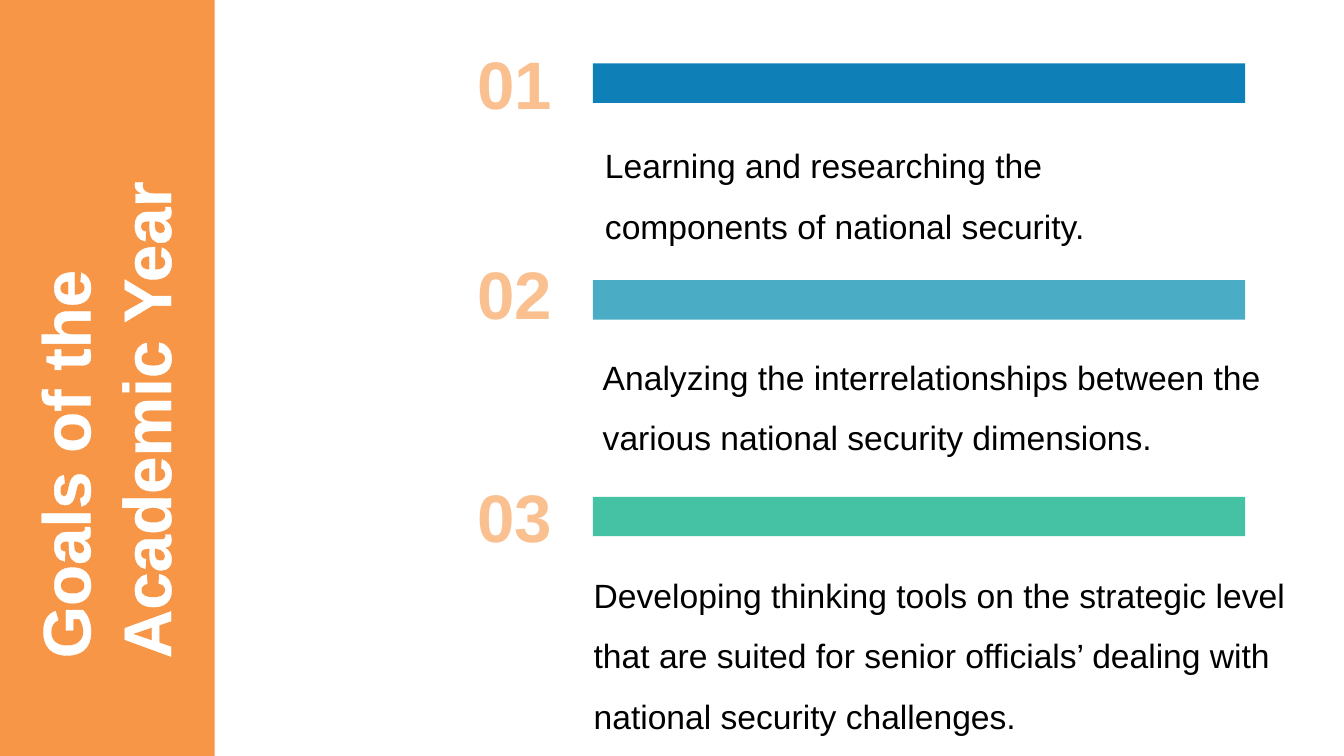
from dataclasses import dataclass

from lxml.etree import SubElement
from pptx import Presentation
from pptx.dml.color import RGBColor
from pptx.enum.shapes import MSO_SHAPE
from pptx.enum.text import MSO_ANCHOR, MSO_AUTO_SIZE, PP_ALIGN
from pptx.oxml.ns import qn
from pptx.util import Inches, Pt


@dataclass(frozen=True)
class Theme:
    font: str = "Arial"
    big: int = 48
    body: int = 24
    side: str = "F79646"
    number: str = "FAC090"
    white: str = "FFFFFF"
    black: str = "000000"
    bars: tuple = ("0E7FB7", "4BACC6", "45C1A4")


THEME = Theme()

# Number top, text box (left, top, width, height, side inset) from the bar's
# left and top edges, and wording of each goal
GOALS = [
    (-0.26, (0, 0.56, 5.78, 1.26, 0.12),
     "Learning and researching the components of national security."),
    (-0.33, (0, 0.51, 7.24, 1.26, 0.1),
     "Analyzing the interrelationships between the various national "
     "security dimensions."),
    (-0.26, (-0.09, 0.52, 7.24, 1.87, 0.1),
     "Developing thinking tools on the strategic level that are suited for "
     "senior officials’ dealing with national security challenges."),
]


def place(shape, left, top, width, height):
    shape.left, shape.top = Inches(left), Inches(top)
    shape.width, shape.height = Inches(width), Inches(height)


def write(shape, text, size, color, bold=False, align=PP_ALIGN.LEFT,
          space=1.0, inset=0.1):
    frame = shape.text_frame
    frame.text = text
    frame.word_wrap = True
    frame.auto_size = MSO_AUTO_SIZE.NONE
    frame.margin_left = frame.margin_right = Inches(inset)
    frame.margin_top = frame.margin_bottom = Inches(0.05)
    para = frame.paragraphs[0]
    para.alignment, para.line_spacing = align, space
    font = para.runs[0].font
    font.name, font.size, font.bold = THEME.font, Pt(size), bold
    font.color.rgb = RGBColor.from_string(color)


def add_box(slide, left, top, width, height, *args, **style):
    box = slide.shapes.add_textbox(0, 0, 0, 0)
    place(box, left, top, width, height)
    write(box, *args, **style)


def add_bar(slide, left, top, width, height, color):
    bar = slide.shapes.add_shape(MSO_SHAPE.RECTANGLE, 0, 0, 0, 0)
    place(bar, left, top, width, height)
    bar.shadow.inherit = False
    bar.fill.solid()
    bar.fill.fore_color.rgb = RGBColor.from_string(color)
    bar.line.fill.background()
    return bar


def add_side(slide, left, top, width, height):
    # Band goes behind the title
    title = slide.shapes.title
    band = add_bar(slide, left, top, width, height, THEME.side)
    title.element.addprevious(band.element)

    # Title reads upwards along the band
    place(title, left - 1.79, top + 2.95, 5.64, 1.72)
    title.rotation = 270
    write(title, "Goals of the Academic Year", THEME.big, THEME.white,
          bold=True)
    title.text_frame.vertical_anchor = MSO_ANCHOR.MIDDLE

    # Thin white outline on the letters
    props = title.element.find(".//" + qn("a:rPr"))
    line = SubElement(props, qn("a:ln"), w=str(int(Pt(0.75))))
    fill = SubElement(line, qn("a:solidFill"))
    SubElement(fill, qn("a:srgbClr"), val=THEME.white)
    props.insert(0, line)


def add_goal(slide, left, top, width, height, order):
    rise, (dx, dy, wide, high, inset), text = GOALS[order]
    add_bar(slide, left, top, width, height, THEME.bars[order])
    add_box(slide, left + dx, top + dy, wide, high, text, THEME.body,
            THEME.black, space=1.5, inset=inset)
    add_box(slide, left - 1.3, top + rise, 1.05, 0.91, f"{order + 1:02}",
            THEME.big, THEME.number, bold=True, align=PP_ALIGN.CENTER,
            inset=0.12)


def main():
    deck = Presentation()
    deck.slide_width, deck.slide_height = Inches(13.33), Inches(7.5)
    slide = deck.slides.add_slide(deck.slide_layouts.get_by_name("Title Only"))
    add_side(slide, 0, 0, 2.13, 7.5)
    for order in range(len(GOALS)):
        add_goal(slide, 5.88, 0.63 + 2.15 * order, 6.47, 0.39, order)
    deck.save("out.pptx")


if __name__ == "__main__":
    main()
